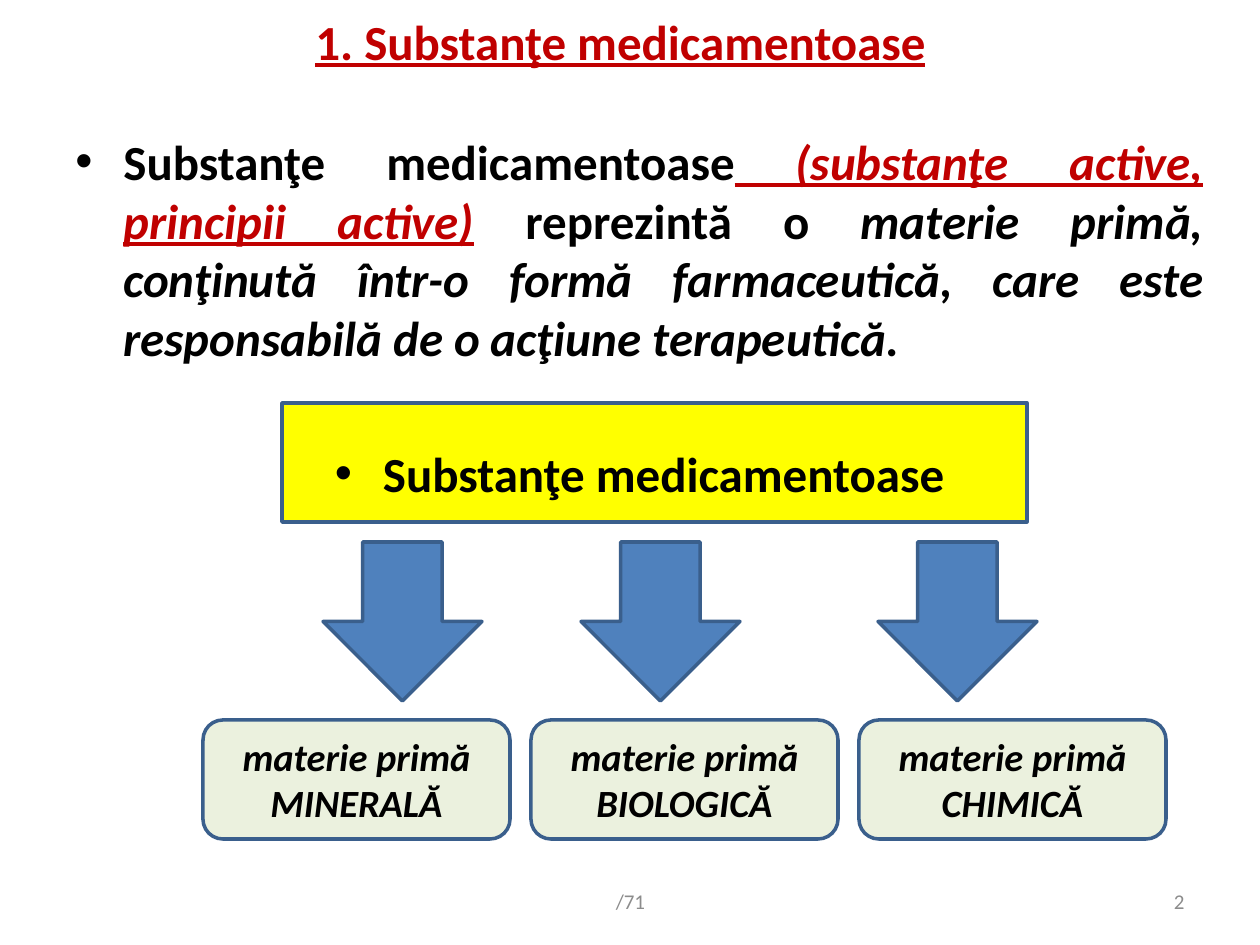
from lxml import etree
from pptx import Presentation
from pptx import util as u
from pptx.dml.color import RGBColor
from pptx.enum import shapes, text
from pptx.oxml.ns import qn

PX = 914400 // 126
HUES = {"red": "C00000", "black": "000000", "grey": "8C8C8C", "yellow": "FFFF00",
        "blue": "4F81BD", "edge": "3A5F8C", "green": "EBF1DE"}
KIND = shapes.MSO_SHAPE
ALIGN = text.PP_ALIGN
MID = text.MSO_ANCHOR.MIDDLE


class Deck:
    def __init__(self, slide, font):
        self.slide = slide
        self.font = font

    def hue(self, name):
        return RGBColor.from_string(HUES[name])

    def style(self, run, size, hue="black", bold=True, slant=False, under=False):
        font = run.font
        font.name, font.size = self.font, u.Pt(size)
        font.bold, font.italic, font.underline = bold, slant, under
        font.color.rgb = self.hue(hue)

    def shape(self, kind, box, fill, label=""):
        item = self.slide.shapes.add_shape(kind, *(n * PX for n in box))
        item.shadow.inherit = False
        item.fill.solid()
        item.fill.fore_color.rgb = self.hue(fill)
        item.line.color.rgb = self.hue("edge")
        item.line.width = u.Pt(2)
        if label:
            frame = item.text_frame
            frame.text = label
            frame.vertical_anchor = MID
            para = frame.paragraphs[0]
            para.alignment = ALIGN.CENTER
            self.style(para.runs[0], 22, slant=True)

    def frame(self, box, anchor=MID):
        frame = self.slide.shapes.add_textbox(*(n * PX for n in box)).text_frame
        frame.word_wrap = True
        frame.vertical_anchor = anchor
        return frame

    def label(self, box, words, size, align=ALIGN.CENTER, **look):
        frame = self.frame(box)
        frame.text = words
        para = frame.paragraphs[0]
        para.alignment = align
        self.style(para.runs[0], size, **look)

    def bullet(self, para, parts, align, gap=0):
        para.alignment = align
        para.space_before = u.Pt(gap)
        props = para._p.get_or_add_pPr()
        props.set("marL", str(48 * PX))
        props.set("indent", str(-48 * PX))
        etree.SubElement(props, qn("a:buFont")).set("typeface", "Arial")
        etree.SubElement(props, qn("a:buChar")).set("char", "•")
        for words, look in parts:
            run = para.add_run()
            run.text = words
            self.style(run, 28, **look)


def main():
    show = Presentation()
    show.slide_width, show.slide_height = 1260 * PX, 945 * PX
    deck = Deck(show.slides.add_slide(show.slide_layouts[6]), "Calibri")

    deck.shape(KIND.RECTANGLE, (282, 403, 745, 119), "yellow")
    deck.label((25, 6, 1191, 69), "1. Substanţe medicamentoase", 28,
               hue="red", under=True)

    body = deck.frame((63, 125, 1153, 784), text.MSO_ANCHOR.TOP)
    deck.bullet(body.paragraphs[0], [
        ("Substanţe medicamentoase", {}),
        (" (substanţe active, principii active)",
         {"hue": "red", "slant": True, "under": True}),
        (" reprezintă o ", {}),
        ("materie primă, conţinută într-o formă farmaceutică, care este "
         "responsabilă de o acţiune terapeutică.", {"slant": True}),
    ], ALIGN.JUSTIFY)
    deck.bullet(body.add_paragraph(), [("Substanţe medicamentoase", {})],
                ALIGN.CENTER, gap=44)

    for left in (323, 581, 878):
        deck.shape(KIND.DOWN_ARROW, (left, 542, 159, 159), "blue")
    for col, source in enumerate(("MINERALĂ", "BIOLOGICĂ", "CHIMICĂ")):
        deck.shape(KIND.ROUNDED_RECTANGLE, (203 + 328 * col, 720, 307, 119),
                   "green", f"materie primă {source}")

    deck.label((431, 876, 399, 50), "/71", 12, hue="grey", bold=False)
    deck.label((903, 876, 294, 50), "2", 12, ALIGN.RIGHT, hue="grey", bold=False)
    show.save("out.pptx")


if __name__ == "__main__":
    main()
